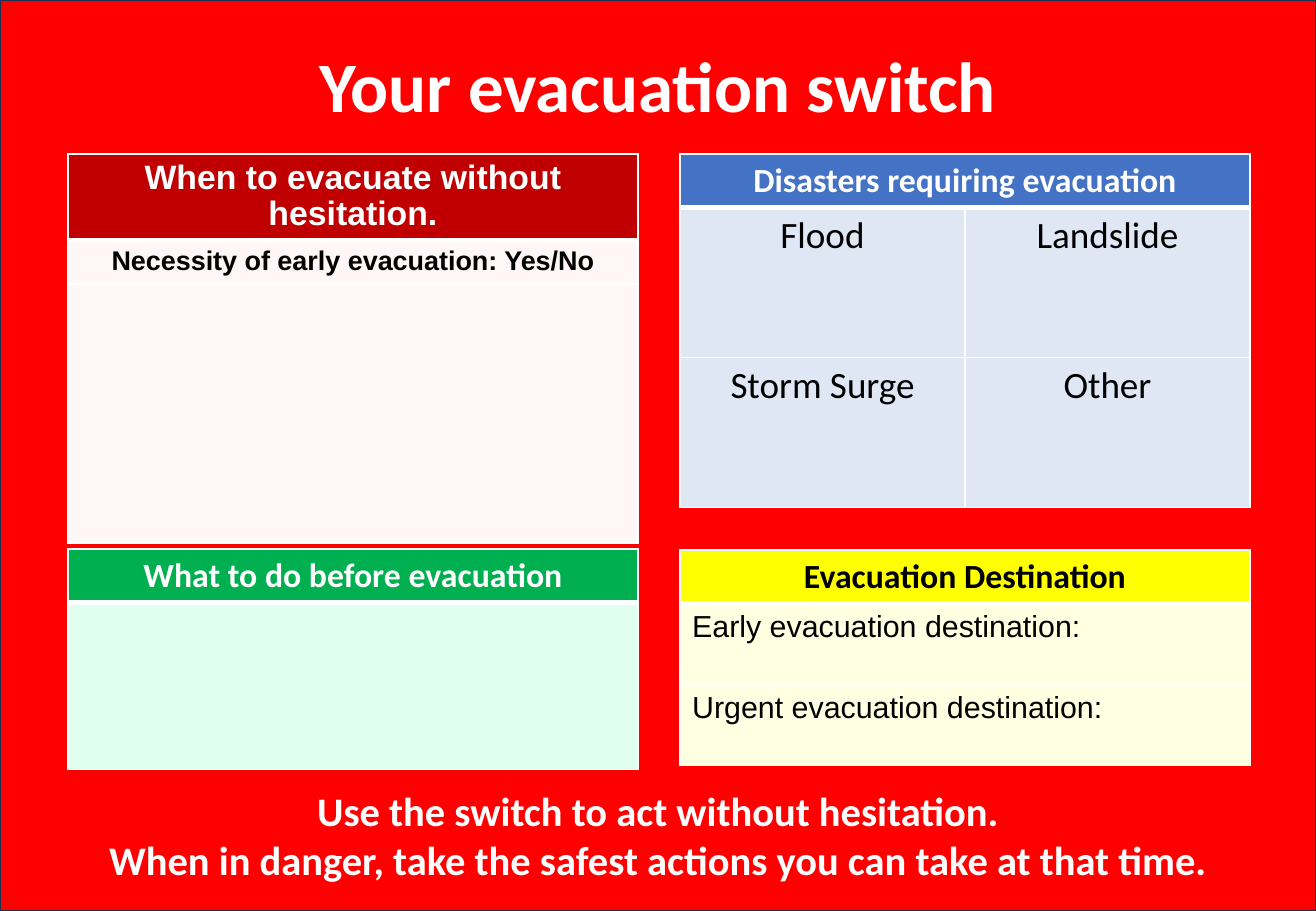
from dataclasses import dataclass

from lxml.etree import SubElement
from pptx import Presentation
from pptx.dml.color import RGBColor
from pptx.enum.shapes import MSO_SHAPE
from pptx.enum.text import MSO_ANCHOR, PP_ALIGN
from pptx.oxml.ns import qn
from pptx.slide import Slide
from pptx.table import _Cell
from pptx.util import Emu, Pt

PX = 7526  # EMU in one px
SLIDE_WIDTH, SLIDE_HEIGHT = 1316, 911
LEFT_X, RIGHT_X, PANEL_WIDTH = 68, 680, 570

WHITE = RGBColor(0xFF, 0xFF, 0xFF)
BLACK = RGBColor(0, 0, 0)
RED = RGBColor(0xFF, 0, 0)
NAVY = RGBColor(0x1C, 0x30, 0x52)
DARK_RED = RGBColor(0xC0, 0, 0)
PALE_RED = RGBColor(0xFF, 0xF7, 0xF7)
BLUE = RGBColor(0x44, 0x72, 0xC4)
PALE_BLUE = RGBColor(0xDF, 0xE7, 0xF5)
GREEN = RGBColor(0, 0xB0, 0x50)
PALE_GREEN = RGBColor(0xE1, 0xFF, 0xEF)
YELLOW = RGBColor(0xFF, 0xFF, 0)
PALE_YELLOW = RGBColor(0xFF, 0xFF, 0xE1)


@dataclass(frozen=True)
class TextStyle:
    size: int
    font: str = "Calibri"
    color: RGBColor = BLACK
    bold: bool = False
    align: PP_ALIGN = PP_ALIGN.CENTER
    line_spacing: float = 1.0


@dataclass(frozen=True)
class Panel:
    x: int
    y: int
    row_heights: list[int]
    heading: str
    heading_style: TextStyle
    heading_fill: RGBColor
    body: list[list[str]]
    body_style: TextStyle
    body_fill: RGBColor


@dataclass(frozen=True)
class Banner:
    y: int
    height: int
    lines: list[str]
    style: TextStyle


WHITE_HEADING = TextStyle(20, color=WHITE, bold=True)

PANELS = [
    Panel(LEFT_X, 154, [86, 44, 259], "When to evacuate without hesitation.",
          TextStyle(20, "Arial", WHITE, True, line_spacing=0.95), DARK_RED,
          [["Necessity of early evacuation: Yes/No"], [""]],
          TextStyle(16, "Arial", bold=True), PALE_RED),
    Panel(RIGHT_X, 154, [53, 150, 150], "Disasters requiring evacuation",
          WHITE_HEADING, BLUE,
          [["Flood", "Landslide"], ["Storm Surge", "Other"]],
          TextStyle(22), PALE_BLUE),
    Panel(LEFT_X, 549, [53, 167], "What to do before evacuation",
          WHITE_HEADING, GREEN, [[""]], TextStyle(18), PALE_GREEN),
    Panel(RIGHT_X, 550, [53, 81, 81], "Evacuation Destination",
          TextStyle(20, bold=True), YELLOW,
          [["Early evacuation destination:"], ["Urgent evacuation destination:"]],
          TextStyle(18, "Arial", align=PP_ALIGN.LEFT), PALE_YELLOW),
]

BANNERS = [
    Banner(41, 86, ["Your evacuation switch"], TextStyle(42, color=WHITE, bold=True)),
    Banner(778, 114, ["Use the switch to act without hesitation.",
                      "When in danger, take the safest actions you can take at that time."],
           TextStyle(24, color=WHITE, bold=True)),
]


def px(length: int) -> Emu:
    return Emu(length * PX)


def write_lines(text_frame, lines: list[str], style: TextStyle) -> None:
    text_frame.text = "\n".join(lines)
    for paragraph in text_frame.paragraphs:
        paragraph.alignment = style.align
        paragraph.line_spacing = style.line_spacing
        paragraph.font.name = style.font
        paragraph.font.size = Pt(style.size)
        paragraph.font.bold = style.bold
        paragraph.font.color.rgb = style.color


def set_borders(cell: _Cell, top: int, bottom: int) -> None:
    """Draw white borders; the sides are 1 pt, top and bottom as given in points."""
    properties = cell._tc.get_or_add_tcPr()
    widths = {"a:lnL": 1, "a:lnR": 1, "a:lnT": top, "a:lnB": bottom}
    for position, (tag, width) in enumerate(widths.items()):
        line = SubElement(properties, qn(tag), w=str(Pt(width)))
        fill = SubElement(line, qn("a:solidFill"))
        SubElement(fill, qn("a:srgbClr"), val=str(WHITE))
        properties.insert(position, line)  # borders come before the cell fill


def add_background(slide: Slide) -> None:
    background = slide.shapes.add_shape(
        MSO_SHAPE.RECTANGLE, 0, 0, px(SLIDE_WIDTH), px(SLIDE_HEIGHT))
    background.shadow.inherit = False
    background.fill.solid()
    background.fill.fore_color.rgb = RED
    background.line.color.rgb = NAVY
    background.line.width = Pt(1)


def add_panel(slide: Slide, panel: Panel) -> None:
    column_count = len(panel.body[0])
    table = slide.shapes.add_table(
        len(panel.row_heights), column_count, px(panel.x), px(panel.y),
        px(PANEL_WIDTH), px(sum(panel.row_heights))).table
    for row, height in zip(table.rows, panel.row_heights):
        row.height = px(height)
    if column_count > 1:
        table.cell(0, 0).merge(table.cell(0, column_count - 1))

    heading_row = [panel.heading] + [""] * (column_count - 1)
    for row_index, texts in enumerate([heading_row, *panel.body]):
        is_heading = row_index == 0
        style = panel.heading_style if is_heading else panel.body_style
        for column_index, text in enumerate(texts):
            cell = table.cell(row_index, column_index)
            cell.fill.solid()
            cell.fill.fore_color.rgb = panel.heading_fill if is_heading else panel.body_fill
            cell.vertical_anchor = MSO_ANCHOR.MIDDLE if is_heading else MSO_ANCHOR.TOP
            set_borders(cell, top=3 if row_index == 1 else 1, bottom=3 if is_heading else 1)
            if text:
                write_lines(cell.text_frame, [text], style)


def add_banner(slide: Slide, banner: Banner) -> None:
    text_frame = slide.shapes.add_textbox(
        0, px(banner.y), px(SLIDE_WIDTH), px(banner.height)).text_frame
    text_frame.word_wrap = True
    text_frame.vertical_anchor = MSO_ANCHOR.MIDDLE
    write_lines(text_frame, banner.lines, banner.style)


def main() -> None:
    presentation = Presentation()
    presentation.slide_width = px(SLIDE_WIDTH)
    presentation.slide_height = px(SLIDE_HEIGHT)
    slide = presentation.slides.add_slide(presentation.slide_layouts[6])
    add_background(slide)
    for panel in PANELS:
        add_panel(slide, panel)
    for banner in BANNERS:
        add_banner(slide, banner)
    presentation.save("out.pptx")


if __name__ == "__main__":
    main()
